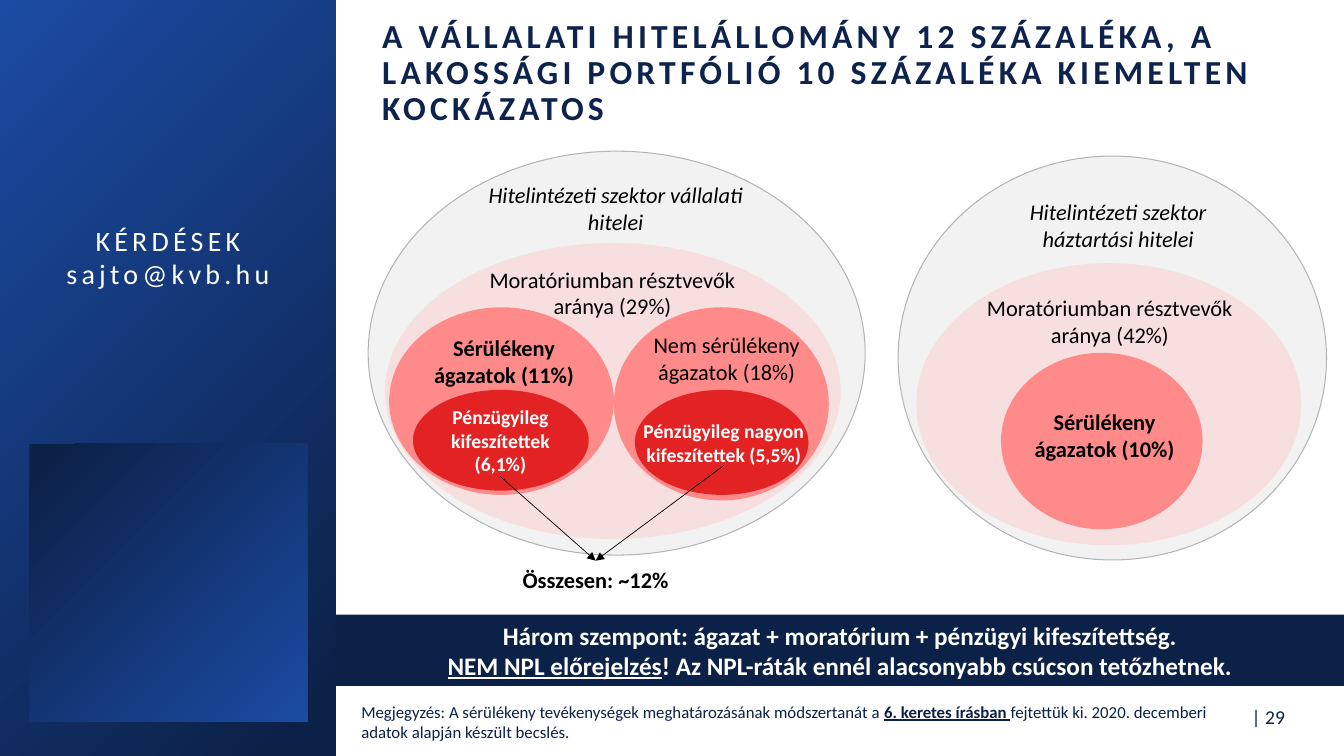
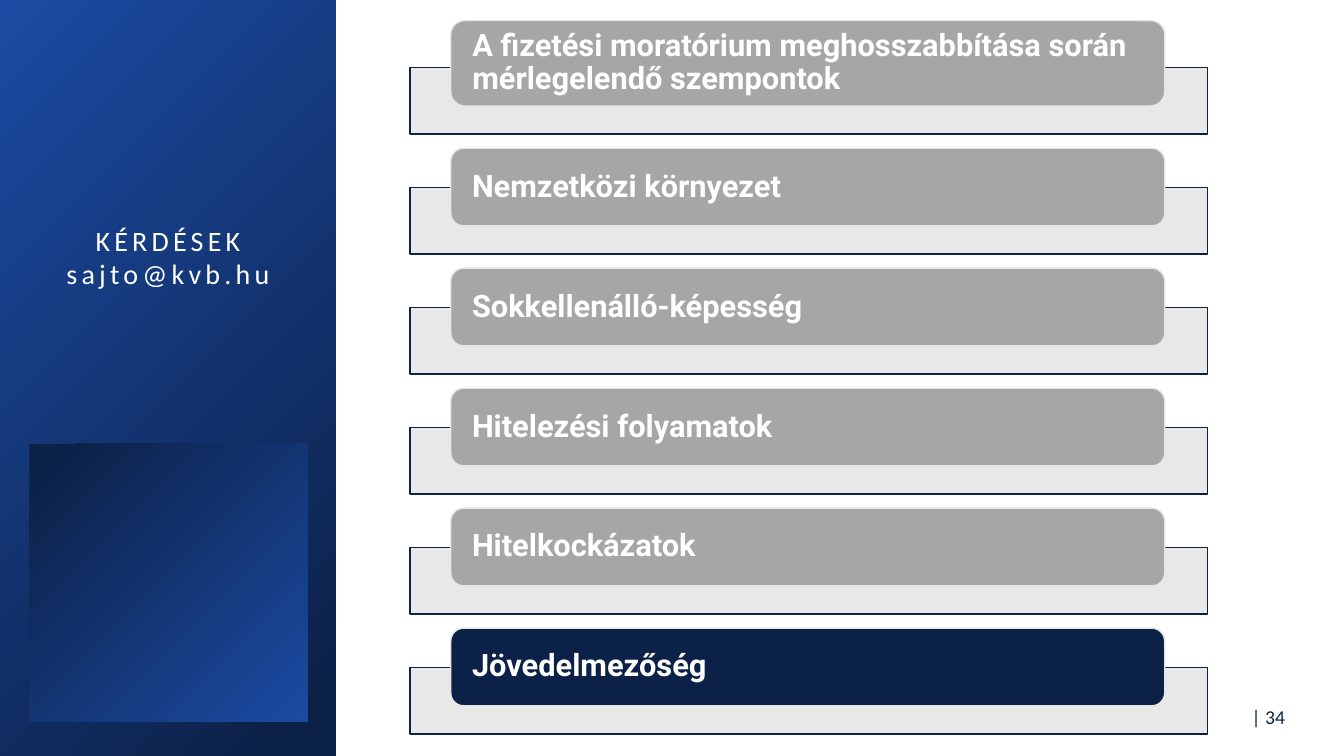
from pptx import Presentation
from pptx.dml.color import RGBColor
from pptx.enum.shapes import MSO_CONNECTOR, MSO_SHAPE
from pptx.enum.text import MSO_ANCHOR, MSO_AUTO_SIZE, PP_ALIGN
from pptx.oxml.ns import qn
from pptx.util import Pt
from lxml.etree import SubElement

color = RGBColor.from_string
NAVY, BLUE, TITLE_NAVY = "0C2148", "1B4BA3", "0D234D"
WHITE, BLACK = "FFFFFF", "000000"
SECTOR, MORATORIUM, VULNERABLE, STRETCHED = "F2F2F2", "FFC5C5", "FF8A8A", "DA0000"
OUTLINE, BAR, INACTIVE = "B4B4B4", "E7E6E6", "A6A6A6"


def draw(slide, preset, box, fill, opacity=100, line=None, line_width=1):
    shape = slide.shapes.add_shape(preset, *[Pt(length) for length in box])
    shape.shadow.inherit = False
    shape.fill.solid()
    shape.fill.fore_color.rgb = color(fill)
    if opacity < 100:
        fill_color = shape._element.spPr.find(qn("a:solidFill"))[0]
        SubElement(fill_color, qn("a:alpha")).set("val", str(opacity * 1000))
    if line:
        shape.line.color.rgb = color(line)
        shape.line.width = Pt(line_width)
    else:
        shape.line.fill.background()
    return shape


def write(shape, *paragraphs, size=16, ink=BLACK, font="Calibri", bold=False, italic=False,
          align=PP_ALIGN.CENTER, anchor=MSO_ANCHOR.MIDDLE, margins=(0, 0),
          line_spacing=1, letter_spacing=0):
    """Fill a shape; a paragraph is a string or a list of (text, emphasised) pairs."""
    frame = shape.text_frame
    frame.word_wrap = True
    frame.auto_size = MSO_AUTO_SIZE.NONE
    frame.vertical_anchor = anchor
    frame.margin_left = frame.margin_right = Pt(margins[0])
    frame.margin_top = frame.margin_bottom = Pt(margins[1])
    for index, content in enumerate(paragraphs):
        paragraph = frame.add_paragraph() if index else frame.paragraphs[0]
        paragraph.alignment = align
        paragraph.line_spacing = line_spacing
        for text, emphasised in [(content, False)] if isinstance(content, str) else content:
            run = paragraph.add_run()
            run.text = text
            run.font.name = font
            run.font.size = Pt(size)
            run.font.bold = bold or emphasised
            run.font.italic = italic
            run.font.underline = emphasised
            run.font.color.rgb = color(ink)
            if letter_spacing:
                run._r.get_or_add_rPr().set("spc", str(letter_spacing * 100))


presentation = Presentation()
presentation.slide_width, presentation.slide_height = Pt(960), Pt(540)
risk_slide = presentation.slides.add_slide(presentation.slide_layouts[5])
agenda_slide = presentation.slides.add_slide(presentation.slide_layouts[6])

# Side panel, shared through the slide master
panel_shapes = []
for box, rotation in [((0, 0, 240, 540), 0), ((21, 317, 198.5, 198.5), 180)]:
    panel = draw(risk_slide, MSO_SHAPE.RECTANGLE, box, NAVY)
    panel.rotation = rotation
    panel.fill.gradient()
    panel.fill.gradient_angle = 135
    for stop, (position, stop_color) in zip(panel.fill.gradient_stops, [(0.06, NAVY), (1, BLUE)]):
        stop.position = position
        stop.color.rgb = color(stop_color)
    panel_shapes.append(panel)
contact = risk_slide.shapes.add_textbox(Pt(29), Pt(156), Pt(182), Pt(55.5))
write(contact, "KÉRDÉSEK", "sajto@kvb.hu", size=20, ink=WHITE, letter_spacing=3,
      anchor=MSO_ANCHOR.TOP, margins=(7.2, 3.6))
panel_shapes.append(contact)
for shape_id, shape in enumerate(panel_shapes, 101):
    shape._element.nvSpPr.cNvPr.set("id", str(shape_id))
    presentation.slide_master.shapes._spTree.append(shape._element)

for slide, number in [(risk_slide, 29), (agenda_slide, 34)]:
    page_number = slide.shapes.add_textbox(Pt(868), Pt(497), Pt(57), Pt(29.5))
    write(page_number, f"| {number}", size=14, ink=NAVY, align=PP_ALIGN.RIGHT, margins=(7.2, 3.6))

# Risk slide
title = risk_slide.shapes.title
title.left, title.top, title.width, title.height = Pt(267), Pt(24.5), Pt(661), Pt(56)
write(title, "A VÁLLALATI HITELÁLLOMÁNY 12 SZÁZALÉKA, A LAKOSSÁGI PORTFÓLIÓ 10 SZÁZALÉKA "
      "KIEMELTEN KOCKÁZATOS", size=24, ink=TITLE_NAVY, bold=True, align=PP_ALIGN.LEFT,
      margins=(6, 3), line_spacing=0.9, letter_spacing=3)

ellipses = [
    ((263, 108, 355, 288.5), SECTOR, 100, OUTLINE),
    ((275, 173.5, 325.5, 211.5), MORATORIUM, 42, None),
    ((278, 219.5, 160.5, 134), VULNERABLE, 100, None),
    ((295, 278.5, 125.5, 72), STRETCHED, 74, None),
    ((438.5, 219.5, 153.5, 138), VULNERABLE, 100, None),
    ((453.5, 278.5, 124, 75), STRETCHED, 74, None),
    ((641.5, 111.5, 306, 288.5), SECTOR, 100, OUTLINE),
    ((654.5, 188, 275, 201.5), MORATORIUM, 42, None),
    ((715, 252, 144, 126), VULNERABLE, 100, None),
]
for box, fill, opacity, line in ellipses:
    draw(risk_slide, MSO_SHAPE.OVAL, box, fill, opacity, line, 0.75)

sector_format = {"italic": True}
vulnerable_format = {"bold": True}
stretched_format = {"bold": True, "size": 14, "ink": WHITE}
labels = [
    ("Hitelintézeti szektor vállalati hitelei", (342.5, 129, 194.5, 39), sector_format),
    ("Moratóriumban résztvevők aránya (29%)", (335, 189.5, 205, 39), {}),
    ("Sérülékeny ágazatok (11%)", (294.5, 238.5, 131, 39), vulnerable_format),
    ("Nem sérülékeny ágazatok (18%)", (460, 236, 118, 39), {}),
    ("Pénzügyileg kifeszítettek (6,1%)", (304.5, 289, 106, 51), stretched_format),
    ("Pénzügyileg nagyon kifeszítettek (5,5%)", (459, 299, 116, 34), stretched_format),
    ("Hitelintézeti szektor háztartási hitelei", (701.5, 141, 194.5, 39), sector_format),
    ("Moratóriumban résztvevők aránya (42%)", (704, 210, 177.5, 39), {}),
    ("Sérülékeny ágazatok (10%)", (735, 291, 108, 39), vulnerable_format),
    ("Összesen: ~12%", (345.5, 400.5, 160, 26.5), {"bold": True}),
]
for text, box, text_format in labels:
    label = risk_slide.shapes.add_textbox(*[Pt(length) for length in box])
    write(label, text, **text_format)

for start_x, start_y in [(357, 340), (517, 332.5)]:
    arrow = risk_slide.shapes.add_connector(
        MSO_CONNECTOR.STRAIGHT, Pt(start_x), Pt(start_y), Pt(425.5), Pt(400.5))
    arrow.line.color.rgb = color(BLACK)
    arrow.line.width = Pt(0.5)
    SubElement(arrow.line._get_or_add_ln(), qn("a:tailEnd")).set("type", "triangle")
    SubElement(arrow._element.spPr, qn("a:effectLst"))

band = draw(risk_slide, MSO_SHAPE.RECTANGLE, (240, 439, 720, 51), NAVY)
write(band, "Három szempont: ágazat + moratórium + pénzügyi kifeszítettség.",
      [("NEM NPL előrejelzés", True),
       ("! Az NPL-ráták ennél alacsonyabb csúcson tetőzhetnek.", False)],
      size=18, ink=WHITE, bold=True, margins=(7.2, 3.6))
for run in band.text_frame.paragraphs[1].runs:
    run.font.bold = True

note = risk_slide.shapes.add_textbox(Pt(251), Pt(497.5), Pt(646), Pt(36))
write(note, [("Megjegyzés: A sérülékeny tevékenységek meghatározásának módszertanát a ", False),
             ("6. keretes írásban ", True),
             ("fejtettük ki. 2020. decemberi adatok alapján készült becslés.", False)],
      size=12, ink=NAVY, align=PP_ALIGN.LEFT, anchor=MSO_ANCHOR.TOP, margins=(7.2, 3.6))

# Agenda slide
topics = ["A fizetési moratórium meghosszabbítása során mérlegelendő szempontok",
          "Nemzetközi környezet", "Sokkellenálló-képesség", "Hitelezési folyamatok",
          "Hitelkockázatok", "Jövedelmezőség"]
current_topic = topics[-1]
for index, topic in enumerate(topics):
    bar_top = 48.2 + index * 85.7
    tab_height = 55.5 if index else 61
    tab_top = bar_top + 27.5 - tab_height
    draw(agenda_slide, MSO_SHAPE.RECTANGLE, (293, bar_top, 569.5, 47.5), BAR, 90, NAVY)
    tab = draw(agenda_slide, MSO_SHAPE.ROUNDED_RECTANGLE, (322, tab_top, 510, tab_height),
               NAVY if topic == current_topic else INACTIVE, line=BAR)
    write(tab, topic, size=22, ink=WHITE, font="Roboto", bold=True, align=PP_ALIGN.LEFT,
          margins=(12.5, 0), line_spacing=0.9)

presentation.save("out.pptx")
